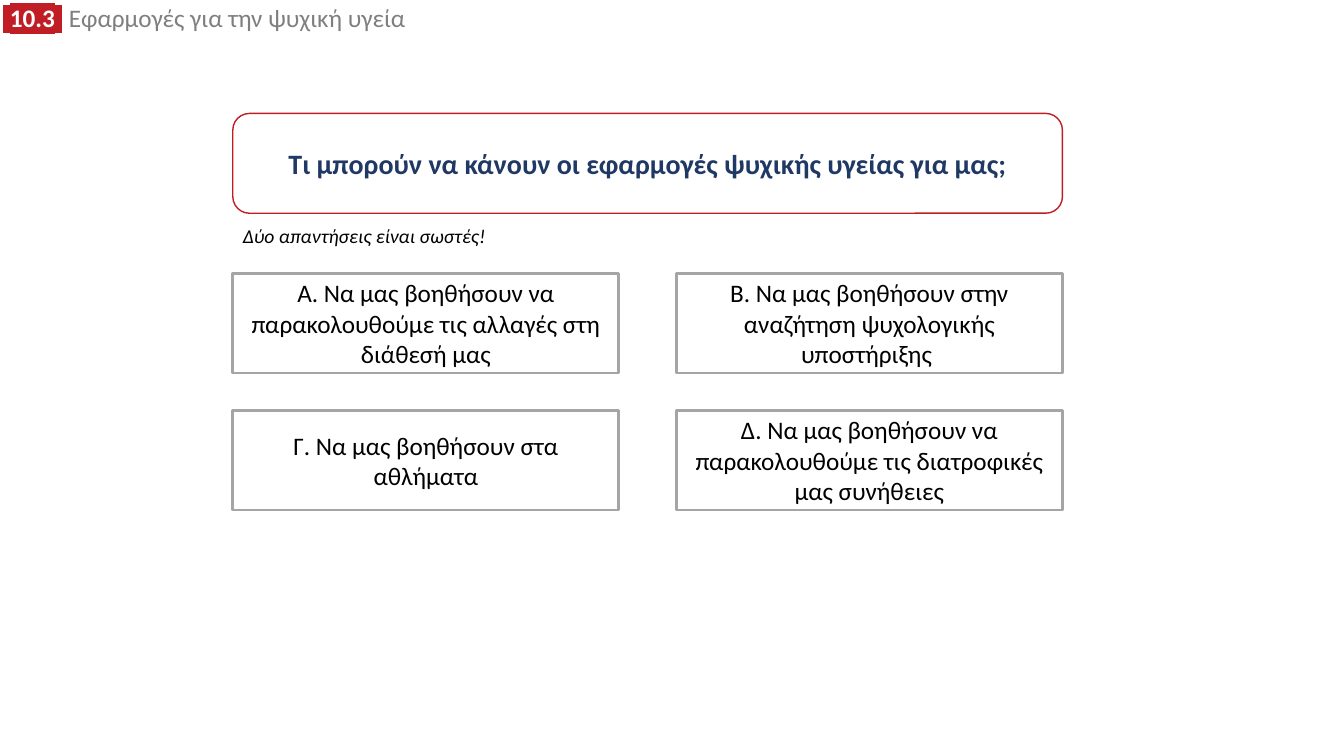
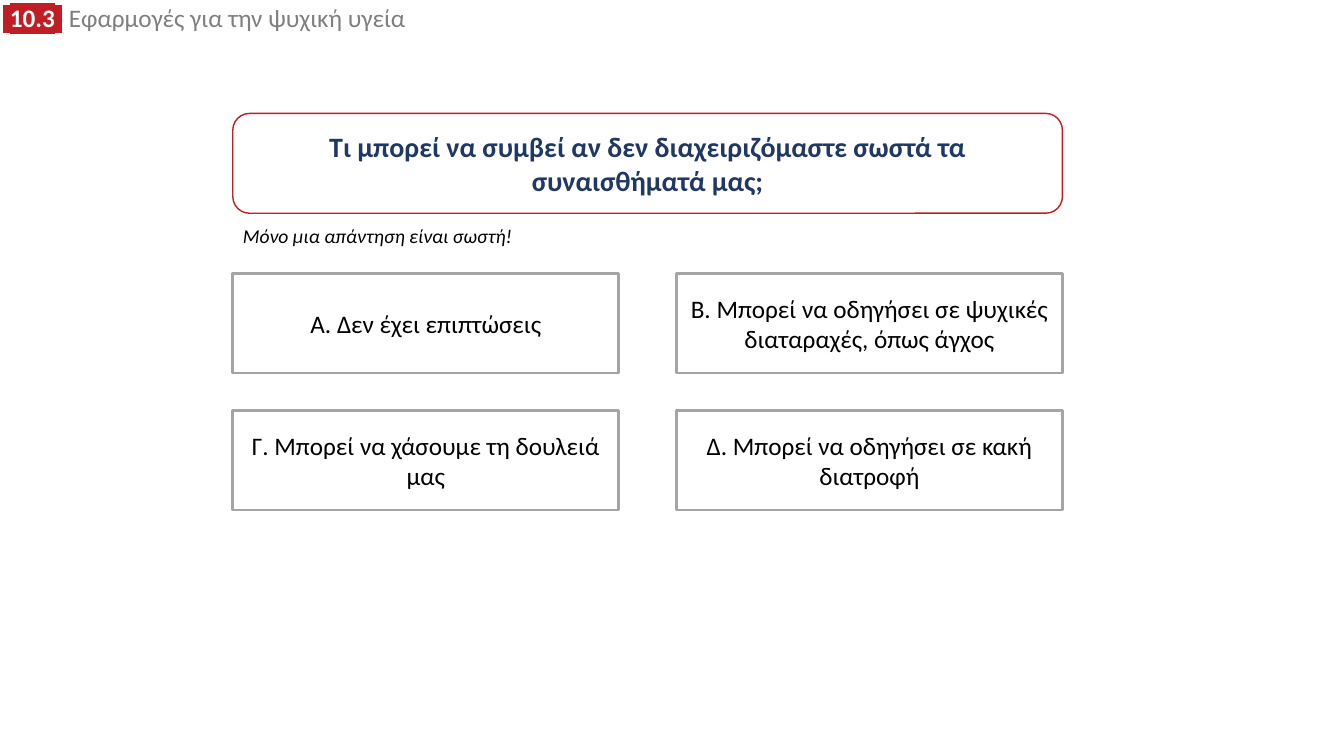
import pptx
import pptx.util
import pptx.dml.color
import pptx.enum.shapes
import pptx.enum.text
import pptx.oxml

Pt = pptx.util.Pt
SHAPE = pptx.enum.shapes.MSO_SHAPE
ALIGN = pptx.enum.text.PP_ALIGN
ANCHOR = pptx.enum.text.MSO_ANCHOR
FIT = pptx.enum.text.MSO_AUTO_SIZE

RED, NAVY, GREY, EDGE = "C01E24", "203864", "7F7F7F", "A5A5A5"
WHITE, BLACK = "FFFFFF", "000000"
BODY, SPACE = "Calibri", "Arial"

HEADER = [
    (" ", SPACE, WHITE, True, RED),
    ("10.3", BODY, WHITE, True, RED),
    (" ", SPACE, WHITE, True, RED),
    (" ", SPACE, GREY, False, None),
    ("Εφαρμογές για την ψυχική υγεία", BODY, GREY, False, None),
]

QUIZ = [
    {
        "ask": "Τι μπορούν να κάνουν οι εφαρμογές ψυχικής υγείας για μας;",
        "hint": "Δύο απαντήσεις είναι σωστές!",
        "picks": [
            "Α. Να μας βοηθήσουν να παρακολουθούμε τις αλλαγές στη διάθεσή μας",
            "Β. Να μας βοηθήσουν στην αναζήτηση ψυχολογικής υποστήριξης ",
            "Γ. Να μας βοηθήσουν στα αθλήματα",
            "Δ. Να μας βοηθήσουν να παρακολουθούμε τις διατροφικές μας συνήθειες",
        ],
    },
    {
        "ask": "Τι μπορεί να συμβεί αν δεν διαχειριζόμαστε σωστά τα συναισθήματά μας;",
        "hint": "Μόνο μια απάντηση είναι σωστή!",
        "picks": [
            "Α. Δεν έχει επιπτώσεις",
            "Β. Μπορεί να οδηγήσει σε ψυχικές διαταραχές, όπως άγχος",
            "Γ. Μπορεί να χάσουμε τη δουλειά μας",
            "Δ. Μπορεί να οδηγήσει σε κακή διατροφή",
        ],
    },
]

LEFT, HIGH = 166.3, 71.3
WIDE, GAP_X, GAP_Y = 275.8, 41, 26.6
ASK_TOP, HINT_TOP, GRID_TOP = 81, 156.2, 195.1


def color(code):
    """Turn a hex string into a colour."""
    return pptx.dml.color.RGBColor.from_string(code)


def write(para, text, size, ink, bold=False, slant=False, face=BODY):
    """Add one styled run to a paragraph."""
    run = para.add_run()
    run.text = text
    font = run.font
    font.size, font.name = Pt(size), face
    font.bold, font.italic = bold, slant
    font.color.rgb = color(ink)
    return run


def mark(run, code):
    """Put a highlight behind a run."""
    space = "http://schemas.openxmlformats.org/drawingml/2006/main"
    glow = pptx.oxml.parse_xml(
        f'<a:highlight xmlns:a="{space}"><a:srgbClr val="{code}"/></a:highlight>'
    )
    run.font.fill._xPr.find(f"{{{space}}}solidFill").addnext(glow)


def label(slide, left, top, width):
    """Add a text box and return its paragraph."""
    frame = slide.shapes.add_textbox(Pt(left), Pt(top), Pt(width), Pt(24.5)).text_frame
    frame.word_wrap = True
    frame.auto_size = FIT.SHAPE_TO_FIT_TEXT
    return frame.paragraphs[0]


def panel(slide, kind, left, top, width, edge, weight):
    """Add an outlined white shape and return its centred paragraph."""
    shape = slide.shapes.add_shape(kind, Pt(left), Pt(top), Pt(width), Pt(HIGH))
    shape.shadow.inherit = False
    shape.fill.solid()
    shape.fill.fore_color.rgb = color(WHITE)
    shape.line.color.rgb = color(edge)
    shape.line.width = Pt(weight)
    frame = shape.text_frame
    frame.word_wrap = True
    frame.vertical_anchor = ANCHOR.MIDDLE
    para = frame.paragraphs[0]
    para.alignment = ALIGN.CENTER
    return para


def header(slide):
    """Add the shared section header."""
    para = label(slide, -5, 2.2, 313)
    para.line_spacing = 0.8
    for text, face, ink, bold, back in HEADER:
        run = write(para, text, 18, ink, bold, face=face)
        if back:
            mark(run, back)


def build(slide, quiz):
    """Lay out one question with its answers."""
    header(slide)
    span = 2 * WIDE + GAP_X
    para = panel(slide, SHAPE.ROUNDED_RECTANGLE, LEFT, ASK_TOP, span, RED, 1)
    write(para, quiz["ask"], 20, NAVY, bold=True)
    write(label(slide, LEFT, HINT_TOP, 212), quiz["hint"], 14, BLACK, slant=True)
    for spot, pick in enumerate(quiz["picks"]):
        row, col = divmod(spot, 2)
        left = LEFT + col * (WIDE + GAP_X)
        top = GRID_TOP + row * (HIGH + GAP_Y)
        para = panel(slide, SHAPE.RECTANGLE, left, top, WIDE, EDGE, 2)
        write(para, pick, 18, BLACK)


def main():
    """Build and save the deck."""
    deck = pptx.Presentation()
    deck.slide_width, deck.slide_height = Pt(960), Pt(540)
    for quiz in QUIZ:
        build(deck.slides.add_slide(deck.slide_layouts[6]), quiz)
    deck.save("out.pptx")


if __name__ == "__main__":
    main()
